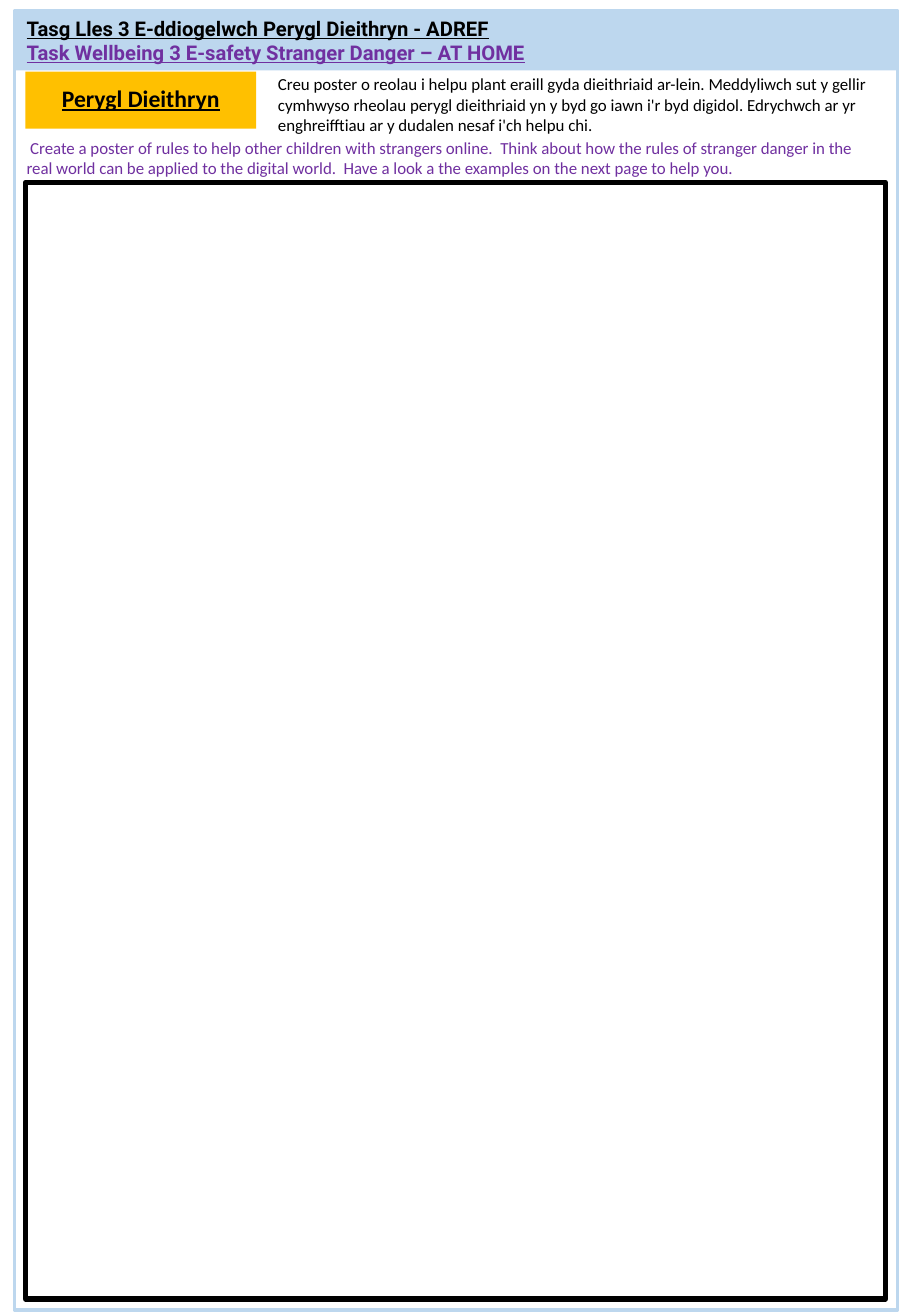
"""Build the stranger danger poster worksheet."""
import pptx
import pptx.dml.color
import pptx.enum.shapes
import pptx.enum.text
import pptx.util

SCALE = 9144
COLOURS = {
    "black": "000000",
    "white": "FFFFFF",
    "purple": "7030A0",
    "sky": "BDD7EE",
    "amber": "FFC000",
}
HEADING = {"name": "Roboto", "size": pptx.util.Pt(12), "bold": True, "underline": True}
LABEL = {"name": "Calibri", "size": pptx.util.Pt(14), "bold": True, "underline": True}
BODY = {"name": "Calibri", "size": pptx.util.Pt(10)}


def emu(pixels):
    """Turn px into EMU."""
    return pptx.util.Emu(pixels * SCALE)


def colour(name):
    """Look up a named colour."""
    return pptx.dml.color.RGBColor.from_string(COLOURS[name])


class Worksheet:
    """Hold the page and draw each kind of element on it."""

    def __init__(self, deck):
        """Add a page with a title to the deck."""
        self.page = deck.slides.add_slide(deck.slide_layouts[5])

    def panel(self, place, fill=None, line=None, width=0):
        """Draw a rectangle."""
        kind = pptx.enum.shapes.MSO_SHAPE.RECTANGLE
        box = self.page.shapes.add_shape(kind, *map(emu, place))
        box.shadow.inherit = False
        if fill:
            box.fill.solid()
            box.fill.fore_color.rgb = colour(fill)
        else:
            box.fill.background()
        if line:
            box.line.color.rgb = colour(line)
            box.line.width = pptx.util.Pt(width)
        else:
            box.line.fill.background()

    def fill_text(self, box, lines, style, align="LEFT", indent=0):
        """Fill a box with lines of text and colour."""
        frame = box.text_frame
        settings = {
            "word_wrap": True,
            "auto_size": pptx.enum.text.MSO_AUTO_SIZE.SHAPE_TO_FIT_TEXT,
            "vertical_anchor": pptx.enum.text.MSO_ANCHOR.TOP,
        }
        for key, value in settings.items():
            setattr(frame, key, value)
        frame.text = "\n".join(text for text, _ in lines)
        for para, (_, ink) in zip(frame.paragraphs, lines):
            para.alignment = getattr(pptx.enum.text.PP_ALIGN, align)
            if indent:
                para._p.get_or_add_pPr().set("indent", str(emu(indent)))
            for span in para.runs:
                for key, value in style.items():
                    setattr(span.font, key, value)
                span.font.color.rgb = colour(ink)

    def title(self, place, lines):
        """Place the title in front of what is already drawn."""
        box = self.page.shapes.title
        box.element.getparent().append(box.element)
        for key, value in zip(("left", "top", "width", "height"), place):
            setattr(box, key, emu(value))
        self.fill_text(box, lines, HEADING)

    def text(self, place, words, style, ink="black", **layout):
        """Add a text box with one paragraph."""
        box = self.page.shapes.add_textbox(*map(emu, place))
        self.fill_text(box, [(words, ink)], style, **layout)


def main():
    """Lay out the worksheet and save it."""
    deck = pptx.Presentation()
    deck.slide_width, deck.slide_height = emu(750), emu(1083)
    sheet = Worksheet(deck)
    sheet.panel((12, 10, 727, 48), fill="sky")
    sheet.title((12, 8, 586, 50), [
        ("Tasg Lles 3 E-ddiogelwch Perygl Dieithryn - ADREF", "black"),
        ("Task Wellbeing 3 E-safety Stranger Danger – AT HOME", "purple"),
    ])
    sheet.panel((12, 9, 727, 1069), line="sky", width=2.25)
    sheet.panel((21, 59, 190, 47), fill="amber")
    sheet.text((16, 64, 200, 34), "Perygl Dieithryn", LABEL, align="CENTER")
    sheet.text(
        (219, 56, 517, 61),
        "Creu poster o reolau i helpu plant eraill gyda dieithriaid ar-lein. "
        "Meddyliwch sut y gellir cymhwyso rheolau perygl dieithriaid yn y byd "
        "go iawn i'r byd digidol. Edrychwch ar yr enghreifftiau ar y dudalen "
        "nesaf i'ch helpu chi.",
        BODY,
    )
    sheet.panel((21, 150, 708, 919), fill="white", line="black", width=3)
    sheet.text(
        (12, 108, 719, 44),
        "Create a poster of rules to help other children with strangers online.  "
        "Think about how the rules of stranger danger in the real world can be "
        "applied to the digital world.  Have a look a the examples on the next "
        "page to help you.",
        BODY, ink="purple", indent=3,
    )
    deck.save("out.pptx")


if __name__ == "__main__":
    main()
